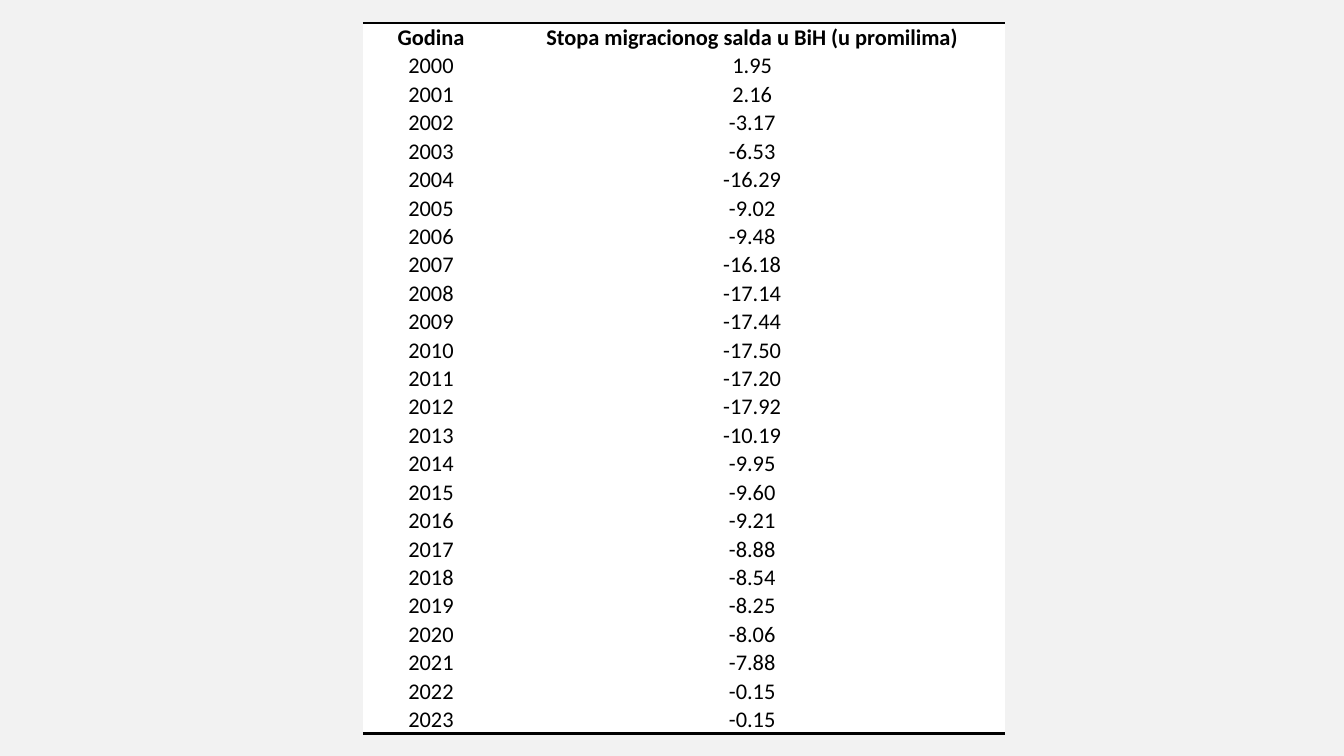
import pptx
import pptx.dml.color
import pptx.enum.text
import pptx.oxml
import pptx.oxml.ns
import pptx.util

COLOURS = {"background": "F2F2F2", "cell": "FFFFFF", "ink": "000000"}
SLIDE_WIDTH, SLIDE_HEIGHT = 13.33, 7.5
TABLE_LEFT, TABLE_TOP, TABLE_HEIGHT = 3.6, 0.23, 7.03
COLUMN_WIDTHS = (1.35, 5.02)
BORDER_POINTS = 2
NO_STYLE = "{2D5ABB26-0587-4C30-8999-92F81FD0307C}"

HEADINGS = ("Godina", "Stopa migracionog salda u BiH (u promilima)")
FIRST_YEAR = 2000
RATES = (
    1.95, 2.16, -3.17, -6.53, -16.29, -9.02, -9.48, -16.18,
    -17.14, -17.44, -17.50, -17.20, -17.92, -10.19, -9.95, -9.60,
    -9.21, -8.88, -8.54, -8.25, -8.06, -7.88, -0.15, -0.15,
)

CELL_FORMAT = {
    "margin_left": pptx.util.Inches(0.01),
    "margin_right": pptx.util.Inches(0.01),
    "margin_top": pptx.util.Inches(0.01),
    "margin_bottom": 0,
    "vertical_anchor": pptx.enum.text.MSO_ANCHOR.MIDDLE,
}
FONT_FORMAT = {"name": "Calibri", "size": pptx.util.Pt(16)}


def apply_format(target, values):
    for name, value in values.items():
        setattr(target, name, value)


def paint(fill, colour):
    fill.solid()
    fill.fore_color.rgb = pptx.dml.color.RGBColor.from_string(COLOURS[colour])


def add_border(cell, tag):
    """Draw one side of a cell: lnT is the top, lnB the bottom."""
    border = pptx.oxml.parse_xml(
        f'<a:{tag} {pptx.oxml.ns.nsdecls("a")} w="{pptx.util.Pt(BORDER_POINTS)}">'
        f'<a:solidFill><a:srgbClr val="{COLOURS["ink"]}"/></a:solidFill></a:{tag}>'
    )
    cell._tc.get_or_add_tcPr().insert(0, border)


def write_cell(cell, text, bold):
    apply_format(cell, CELL_FORMAT)
    paint(cell.fill, "cell")
    paragraph = cell.text_frame.paragraphs[0]
    paragraph.alignment = pptx.enum.text.PP_ALIGN.CENTER
    run = paragraph.add_run()
    run.text = text
    apply_format(run.font, {**FONT_FORMAT, "bold": bold})
    paint(run.font.fill, "ink")


def add_rate_table(slide, rows):
    inches = pptx.util.Inches
    table = slide.shapes.add_table(
        len(rows), len(COLUMN_WIDTHS), inches(TABLE_LEFT), inches(TABLE_TOP),
        inches(sum(COLUMN_WIDTHS)), inches(TABLE_HEIGHT),
    ).table
    apply_format(table, {"first_row": False, "horz_banding": False})
    table._tbl.tblPr.find(pptx.oxml.ns.qn("a:tableStyleId")).text = NO_STYLE

    # Grid and text
    for column, width in zip(table.columns, COLUMN_WIDTHS):
        column.width = inches(width)
    for row_index, texts in enumerate(rows):
        table.rows[row_index].height = inches(TABLE_HEIGHT / len(rows))
        for column_index, text in enumerate(texts):
            write_cell(table.cell(row_index, column_index), text, row_index == 0)

    # Rules above the headings and below the last year
    for column_index in range(len(COLUMN_WIDTHS)):
        add_border(table.cell(0, column_index), "lnT")
        add_border(table.cell(len(rows) - 1, column_index), "lnB")


def main():
    presentation = pptx.Presentation()
    presentation.slide_width = pptx.util.Inches(SLIDE_WIDTH)
    presentation.slide_height = pptx.util.Inches(SLIDE_HEIGHT)
    slide = presentation.slides.add_slide(presentation.slide_layouts[6])
    paint(slide.background.fill, "background")

    years = enumerate(RATES, FIRST_YEAR)
    add_rate_table(slide, [HEADINGS] + [(str(year), f"{rate:.2f}") for year, rate in years])
    presentation.save("out.pptx")


if __name__ == "__main__":
    main()
